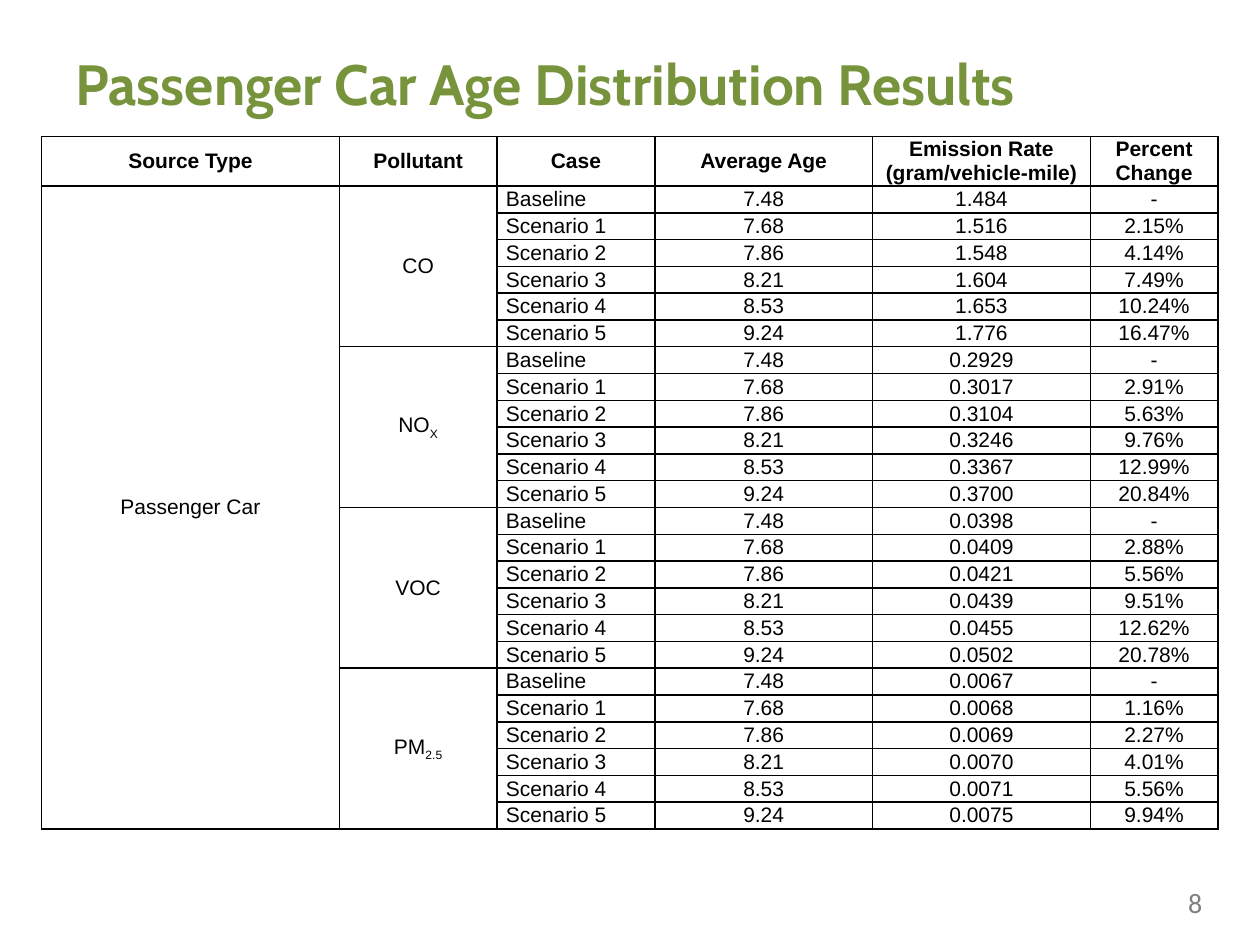
from lxml import etree
from pptx import Presentation
from pptx.dml.color import RGBColor
from pptx.enum import text as t
from pptx.oxml import ns
from pptx.util import Cm, Pt

# Content
TITLE = "Passenger Car Age Distribution Results"
PAGE = "8"
HEADERS = ["Source Type", "Pollutant", "Case", "Average Age",
           "Emission Rate (gram/vehicle-mile)", "Percent Change"]
SOURCE = "Passenger Car"
CASES = [("Baseline", "7.48"), ("Scenario 1", "7.68"), ("Scenario 2", "7.86"),
         ("Scenario 3", "8.21"), ("Scenario 4", "8.53"), ("Scenario 5", "9.24")]
# Pollutant, subscript, emission rates, percent changes
POLLUTANTS = [
    ("CO", "", ["1.484", "1.516", "1.548", "1.604", "1.653", "1.776"],
     ["-", "2.15%", "4.14%", "7.49%", "10.24%", "16.47%"]),
    ("NO", "X", ["0.2929", "0.3017", "0.3104", "0.3246", "0.3367", "0.3700"],
     ["-", "2.91%", "5.63%", "9.76%", "12.99%", "20.84%"]),
    ("VOC", "", ["0.0398", "0.0409", "0.0421", "0.0439", "0.0455", "0.0502"],
     ["-", "2.88%", "5.56%", "9.51%", "12.62%", "20.78%"]),
    ("PM", "2.5", ["0.0067", "0.0068", "0.0069", "0.0070", "0.0071", "0.0075"],
     ["-", "1.16%", "2.27%", "4.01%", "5.56%", "9.94%"]),
]
COL_WIDTHS = [6, 3.18, 3.18, 4.39, 4.39, 2.57]
HEADER_H, ROW_H = 1, 0.54
LEFT, CENTER = t.PP_ALIGN.LEFT, t.PP_ALIGN.CENTER


def color(hex_code):
    return RGBColor.from_string(hex_code)


def write(tf, text, size=12, font="Arial", hex_code="000000", bold=False,
          align=CENTER, sub=""):
    """Fill the first paragraph, with an optional subscript after the text."""
    p = tf.paragraphs[0]
    p.alignment = align
    for part, baseline in ((text, 0), (sub, -25000)):
        if not part:
            continue
        r = p.add_run()
        r.text = part
        r.font.size, r.font.name, r.font.bold = Pt(size), font, bold
        r.font.color.rgb = color(hex_code)
        if baseline:
            r.font._element.set("baseline", str(baseline))


def format_cell(cell):
    """Black 1 pt border on each side, white fill, tight margins."""
    tcPr = cell._tc.get_or_add_tcPr()
    for side in ("a:lnL", "a:lnR", "a:lnT", "a:lnB"):
        ln = etree.SubElement(tcPr, ns.qn(side), w=str(Pt(1)))
        fill = etree.SubElement(ln, ns.qn("a:solidFill"))
        etree.SubElement(fill, ns.qn("a:srgbClr"), val="000000")
    cell.fill.solid()
    cell.fill.fore_color.rgb = color("FFFFFF")
    cell.vertical_anchor = t.MSO_ANCHOR.MIDDLE
    cell.margin_left = cell.margin_right = Cm(0.18)
    cell.margin_top = cell.margin_bottom = 0


prs = Presentation()
prs.slide_width, prs.slide_height = Cm(25.4), Cm(19.05)
s = prs.slides.add_slide(prs.slide_layouts[5])

# Title
sp = s.shapes.title
sp.left, sp.top, sp.width, sp.height = Cm(1.27), Cm(0.08), Cm(22.86), Cm(3.18)
sp.text_frame.vertical_anchor = t.MSO_ANCHOR.MIDDLE
sp.text_frame.auto_size = t.MSO_AUTO_SIZE.NONE
write(sp.text_frame, TITLE, size=32.4, font="Cabin", hex_code="77933C",
      bold=True, align=LEFT)

# Results table
n = len(CASES)
n_rows = 1 + n * len(POLLUTANTS)
table = s.shapes.add_table(n_rows, len(HEADERS), Cm(0.84), Cm(2.75),
                           Cm(sum(COL_WIDTHS)),
                           Cm(HEADER_H + ROW_H * (n_rows - 1))).table
table.first_row = table.horz_banding = False
for col, width in zip(table.columns, COL_WIDTHS):
    col.width = Cm(width)
for i, row in enumerate(table.rows):
    row.height = Cm(ROW_H if i else HEADER_H)
for cell in table.iter_cells():
    format_cell(cell)

for c, header in enumerate(HEADERS):
    write(table.cell(0, c).text_frame, header, bold=True)

table.cell(1, 0).merge(table.cell(n_rows - 1, 0))
write(table.cell(1, 0).text_frame, SOURCE)
for g, (name, sub, rates, changes) in enumerate(POLLUTANTS):
    top = 1 + g * n
    table.cell(top, 1).merge(table.cell(top + n - 1, 1))
    write(table.cell(top, 1).text_frame, name, sub=sub)
    for i, ((case, age), rate, change) in enumerate(zip(CASES, rates, changes)):
        for c, value in enumerate((case, age, rate, change), start=2):
            write(table.cell(top + i, c).text_frame, value,
                  align=LEFT if c == 2 else CENTER)

# Page number
sp = s.shapes.add_textbox(Cm(23.7), Cm(17.73), Cm(1.27), Cm(0.94))
sp.text_frame.word_wrap = True
write(sp.text_frame, PAGE, size=16, font="Calibri", hex_code="808080", align=LEFT)

prs.save("out.pptx")
